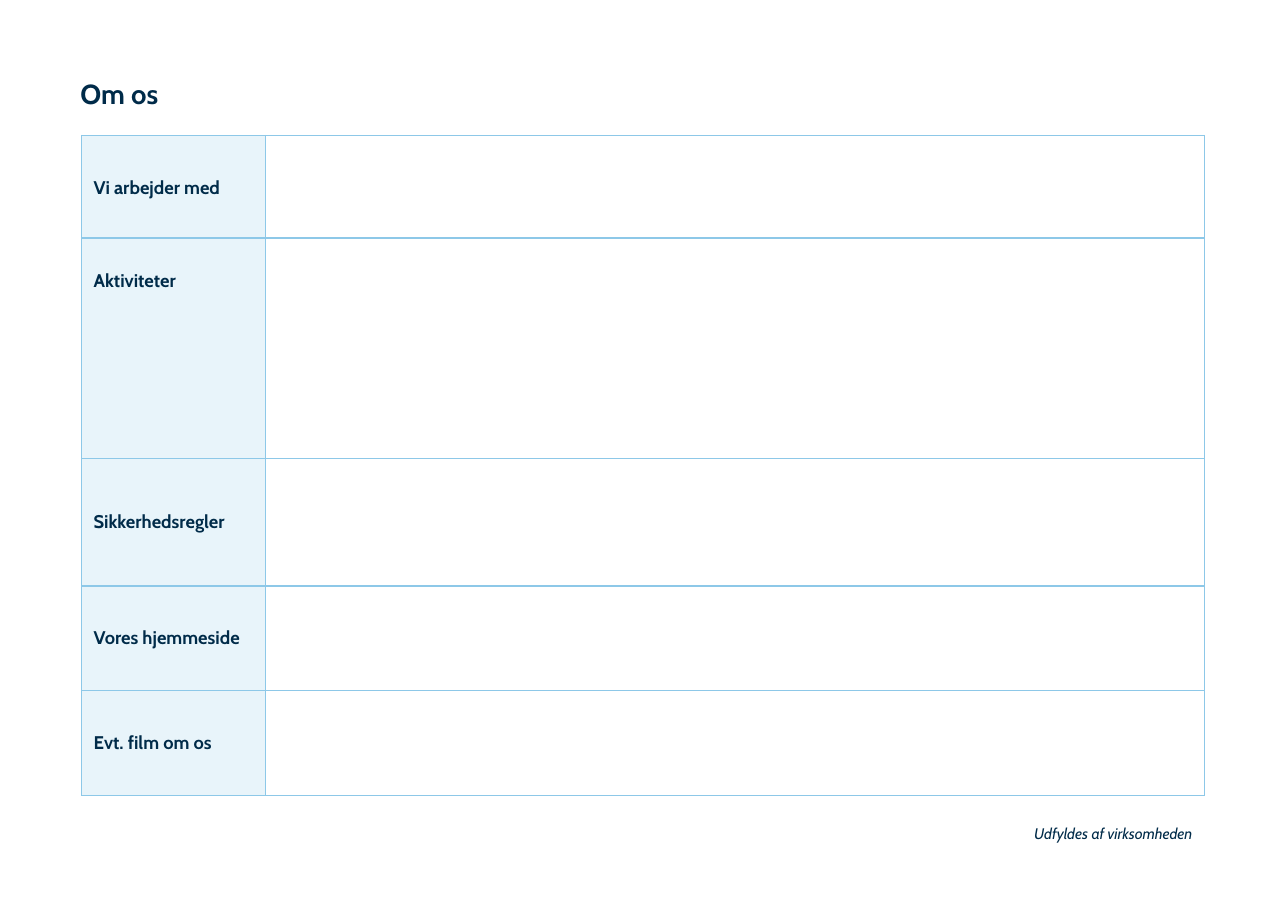
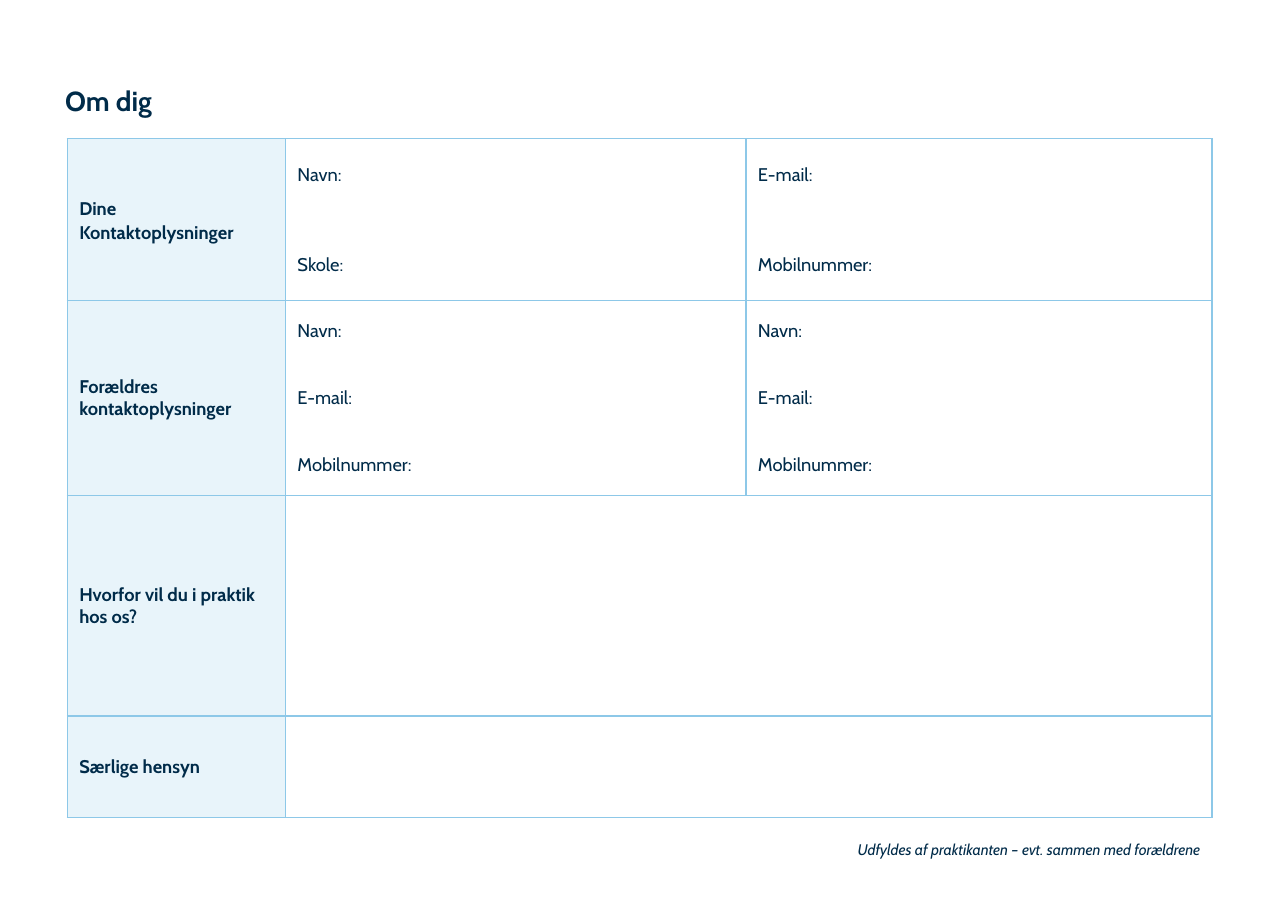
import pptx
import pptx.util
import pptx.dml.color
import pptx.enum.text
import pptx.oxml
import pptx.oxml.ns
import lxml.etree

Inches = pptx.util.Inches
Pt = pptx.util.Pt
ALIGN = pptx.enum.text.PP_ALIGN
ANCHOR = pptx.enum.text.MSO_ANCHOR

FONT = "Cabin"
NAVY = "002B49"
SKY = "8DC8E8"
TINT = 20
EDGE = 70


def color(code):
    return pptx.dml.color.RGBColor.from_string(code)


def write(frame, text, size=12, bold=False, italic=False, align=ALIGN.LEFT,
          gap=0, spacing=None):
    """Fill a frame with one paragraph per line; gap is the points between them."""
    frame.word_wrap = True
    for i, line in enumerate(text.split("\n")):
        para = frame.add_paragraph() if i else frame.paragraphs[0]
        para.text = line
        para.alignment = align
        para.space_before = Pt(gap if i else 0)
        if spacing:
            para.line_spacing = spacing
        for run in para.runs:
            font = run.font
            font.name, font.size = FONT, Pt(size)
            font.bold, font.italic = bold, italic
            font.color.rgb = color(NAVY)


def add_alpha(parent, percent):
    for rgb in parent.iter(pptx.oxml.ns.qn("a:srgbClr")):
        alpha = lxml.etree.SubElement(rgb, pptx.oxml.ns.qn("a:alpha"))
        alpha.set("val", str(percent * 1000))


def tint(cell):
    cell.fill.solid()
    cell.fill.fore_color.rgb = color(SKY)
    add_alpha(cell._tc.tcPr, TINT)


def border(cell):
    props = cell._tc.get_or_add_tcPr()
    for i, side in enumerate("LRTB"):
        line = pptx.oxml.parse_xml(
            f'<a:ln{side} {pptx.oxml.ns.nsdecls("a")} w="{Pt(1)}">'
            f'<a:solidFill><a:srgbClr val="{SKY}"/></a:solidFill>'
            f'<a:prstDash val="solid"/></a:ln{side}>')
        add_alpha(line, EDGE)
        props.insert(i, line)


def inset(cell, top=0.06):
    cell.margin_left = cell.margin_right = Inches(0.11)
    cell.margin_top, cell.margin_bottom = Inches(top), Inches(0.06)


def title(slide, box, text):
    shape = slide.shapes.title
    shape.left, shape.top, shape.width, shape.height = map(Inches, box)
    frame = shape.text_frame
    frame.auto_size = pptx.enum.text.MSO_AUTO_SIZE.NONE
    frame.vertical_anchor = ANCHOR.TOP
    write(frame, text, size=18, bold=True)


def footer(slide, box, text):
    frame = slide.shapes.add_textbox(*map(Inches, box)).text_frame
    write(frame, text, size=10, italic=True, align=ALIGN.RIGHT)


def form(slide, left, top, cols, rows):
    """Draw an empty bordered table with a tinted first column."""
    table = slide.shapes.add_table(
        len(rows), len(cols), Inches(left), Inches(top),
        Inches(sum(cols)), Inches(sum(rows))).table
    table.first_row = table.horz_banding = False
    for col, width in zip(table.columns, cols):
        col.width = Inches(width)
    for row, height in zip(table.rows, rows):
        row.height = Inches(height)
        for i, cell in enumerate(row.cells):
            inset(cell)
            cell.vertical_anchor = ANCHOR.MIDDLE
            if i:
                cell.fill.background()
            else:
                tint(cell)
            border(cell)
    return table


def label(table, names):
    for i, name in enumerate(names):
        write(table.cell(i, 0).text_frame, name, bold=True,
              spacing=None if i else 1.07)


def about_us(slide):
    title(slide, (0.63, 0.65, 5.85, 0.4), "Om os")
    table = form(slide, 0.74, 1.23, (1.67, 8.52), (0.93, 2, 1.16, 0.95, 0.95))
    label(table, ("Vi arbejder med", "Aktiviteter", "Sikkerhedsregler",
                  "Vores hjemmeside", "Evt. film om os"))
    tasks = table.cell(1, 0)
    tasks.vertical_anchor = ANCHOR.TOP
    inset(tasks, top=0.29)
    footer(slide, (7.72, 7.43, 3.2, 0.28), "Udfyldes af virksomheden")


def about_you(slide):
    title(slide, (0.49, 0.71, 5.85, 0.4), "Om dig")
    table = form(slide, 0.61, 1.26, (1.98, 4.18, 4.23), (1.47, 1.77, 2, 0.92))
    label(table, ("Dine Kontaktoplysninger", "Forældres kontaktoplysninger",
                  "Hvorfor vil du i praktik \vhos os?", "Særlige hensyn"))
    parent = "Navn:\nE-mail:\nMobilnummer:"
    fields = ((44, ("Navn:\nSkole:", "E-mail:\nMobilnummer:")),
              (29, (parent, parent)))
    for row, (gap, texts) in enumerate(fields):
        for col, text in enumerate(texts, 1):
            write(table.cell(row, col).text_frame, text, gap=gap)
    for row in (2, 3):
        table.cell(row, 1).merge(table.cell(row, 2))
    footer(slide, (6.22, 7.58, 4.77, 0.28),
           "Udfyldes af praktikanten – evt. sammen med forældrene")


def main():
    deck = pptx.Presentation()
    deck.slide_width, deck.slide_height = Inches(11.69), Inches(8.27)
    for build in (about_us, about_you):
        build(deck.slides.add_slide(deck.slide_layouts[5]))
    deck.save("out.pptx")


if __name__ == "__main__":
    main()
